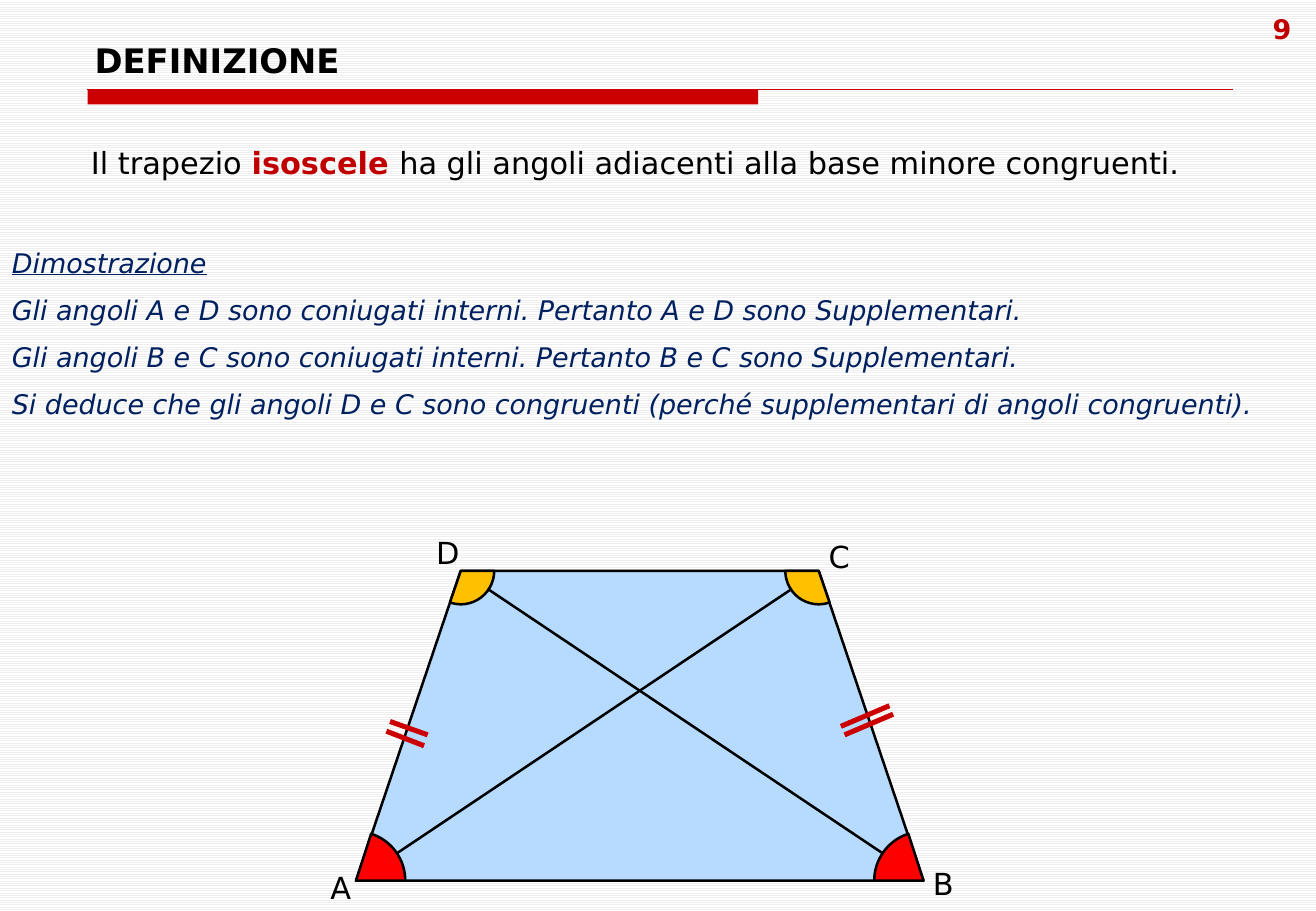
from lxml.etree import SubElement
from pptx import Presentation
from pptx.dml.color import RGBColor
from pptx.enum.dml import MSO_PATTERN
from pptx.enum.shapes import MSO_CONNECTOR, MSO_SHAPE
from pptx.enum.text import MSO_ANCHOR, MSO_AUTO_SIZE, PP_ALIGN
from pptx.oxml.ns import qn
from pptx.util import Inches, Pt

BLACK = RGBColor(0x00, 0x00, 0x00)
WHITE = RGBColor(0xFF, 0xFF, 0xFF)
STRIPE = RGBColor(0xEE, 0xEE, 0xEE)
RULE_RED = RGBColor(0xCC, 0x00, 0x00)
DARK_RED = RGBColor(0xC0, 0x00, 0x00)
NAVY = RGBColor(0x00, 0x20, 0x60)
SKY = RGBColor(0xB7, 0xDB, 0xFF)
AMBER = RGBColor(0xFF, 0xC0, 0x00)
RED = RGBColor(0xFF, 0x00, 0x00)
FONT = "DejaVu Sans"

PLAIN = {"size": Pt(18), "bold": False}
STRONG = {"size": Pt(18), "bold": True}
HEADING = {"size": Pt(20), "bold": True}
NUMBER = {"size": Pt(16), "bold": True}
PROOF = {"size": Pt(16), "italic": True}
PROOF_HEADING = PROOF | {"underline": True}

PAGE_NUMBER = [[("9", NUMBER, DARK_RED)]]
TITLE = [[("DEFINIZIONE", HEADING, BLACK)]]
DEFINITION = [[
    ("Il trapezio ", PLAIN, BLACK),
    ("isoscele ", STRONG, DARK_RED),
    ("ha gli angoli adiacenti alla base minore congruenti.", PLAIN, BLACK),
]]
DEMONSTRATION = [
    [("Dimostrazione", PROOF_HEADING, NAVY)],
    [("Gli angoli A e D sono coniugati interni. Pertanto A e D sono Supplementari.", PROOF, NAVY)],
    [("Gli angoli B e C sono coniugati interni. Pertanto B e C sono Supplementari.", PROOF, NAVY)],
    [("Si deduce che gli angoli D e C sono congruenti "
      "(perché supplementari di angoli congruenti).", PROOF, NAVY)],
]

LEFT, TOP, WIDTH, HEIGHT = 2.93, 4.7, 4.67, 2.55
SLANT = 0.338
INSET = SLANT * HEIGHT
RIGHT, BOTTOM = LEFT + WIDTH, TOP + HEIGHT
VERTICES = {
    "A": (LEFT, BOTTOM),
    "B": (RIGHT, BOTTOM),
    "C": (RIGHT - INSET, TOP),
    "D": (LEFT + INSET, TOP),
}
LABELS = {
    "A": (2.62, 7.11, 0.37),
    "B": (7.58, 7.07, 0.37),
    "C": (6.72, 4.38, 0.38),
    "D": (3.49, 4.35, 0.39),
}
ANGLES = {
    "D": (0.55, 65.372, AMBER, ()),
    "C": (0.55, 65.372, AMBER, ("flipH",)),
    "A": (0.81, 43.296, RED, ("flipV",)),
    "B": (0.81, 43.296, RED, ("flipH", "flipV")),
}
DIAGONALS = ["AC", "DB"]
EQUAL_SIDE_TICKS = [
    ((3.18, 6.02), (3.49, 6.14)),
    ((3.21, 5.94), (3.52, 6.05)),
    ((6.95, 6.05), (7.35, 5.88)),
    ((6.92, 5.98), (7.32, 5.81)),
]

deck = Presentation()
deck.slide_width, deck.slide_height = Inches(10.83), Inches(7.5)
slide = deck.slides.add_slide(deck.slide_layouts[6])
backdrop = slide.background.fill
backdrop.patterned()
backdrop.pattern = MSO_PATTERN.LIGHT_HORIZONTAL
backdrop.fore_color.rgb, backdrop.back_color.rgb = STRIPE, WHITE


def add_text(paragraphs, left, top, width, height, align=PP_ALIGN.LEFT, gap=0, **frame_format):
    frame = slide.shapes.add_textbox(*map(Inches, (left, top, width, height))).text_frame
    for key, value in ({"word_wrap": True} | frame_format).items():
        setattr(frame, key, value)
    for index, runs in enumerate(paragraphs):
        paragraph = frame.paragraphs[0] if index == 0 else frame.add_paragraph()
        paragraph.alignment = align
        paragraph.space_before = Pt(gap if index else 0)
        for words, style, color in runs:
            run = paragraph.add_run()
            run.text = words
            run.font.color.rgb = color
            for key, value in ({"name": FONT} | style).items():
                setattr(run.font, key, value)


def add_figure(preset, left, top, width, height, fill, outline=BLACK, weight=1.5):
    figure = slide.shapes.add_shape(preset, *map(Inches, (left, top, width, height)))
    figure.shadow.inherit = False
    figure.fill.solid()
    figure.fill.fore_color.rgb = fill
    figure.line.color.rgb = outline
    figure.line.width = Pt(weight)
    return figure


def add_line(start, end, color, weight):
    line = slide.shapes.add_connector(MSO_CONNECTOR.STRAIGHT, *map(Inches, (*start, *end)))
    line.line.color.rgb = color
    line.line.width = Pt(weight)
    SubElement(line._element.spPr, qn("a:effectLst"))


bar = add_figure(MSO_SHAPE.RECTANGLE, 0.72, 0.74, 5.52, 0.12, RULE_RED)
bar.line.fill.background()
add_line((0.72, 0.74), (10.15, 0.74), RULE_RED, 0.75)
add_text(PAGE_NUMBER, 10.18, 0.05, 0.74, 0.52, align=PP_ALIGN.CENTER)
add_text(TITLE, 0.68, 0.33, 9.48, 0.38, vertical_anchor=MSO_ANCHOR.BOTTOM)
add_text(DEFINITION, 0.65, 1.14, 10.18, 0.4, auto_size=MSO_AUTO_SIZE.SHAPE_TO_FIT_TEXT)

for vertex, (left, top, width) in LABELS.items():
    add_text([[(vertex, PLAIN, BLACK)]], left, top, width, 0.4,
             word_wrap=False, auto_size=MSO_AUTO_SIZE.SHAPE_TO_FIT_TEXT)

trapezoid = add_figure(MSO_SHAPE.TRAPEZOID, LEFT, TOP, WIDTH, HEIGHT, SKY)
trapezoid.adjustments[0] = SLANT
for start, end in EQUAL_SIDE_TICKS:
    add_line(start, end, RULE_RED, 3)
for start, end in DIAGONALS:
    add_line(VERTICES[start], VERTICES[end], BLACK, 1.5)

add_text(DEMONSTRATION, 0, 1.98, 10.83, 1.99, align=PP_ALIGN.JUSTIFY, gap=8.6,
         auto_size=MSO_AUTO_SIZE.SHAPE_TO_FIT_TEXT)

for vertex, (diameter, sweep, color, flips) in ANGLES.items():
    x, y = VERTICES[vertex]
    angle = add_figure(MSO_SHAPE.PIE, x - diameter / 2, y - diameter / 2, diameter, diameter, color)
    angle.adjustments[0], angle.adjustments[1] = 0, sweep
    for flip in flips:
        angle._element.spPr.xfrm.set(flip, "1")

deck.save("out.pptx")
